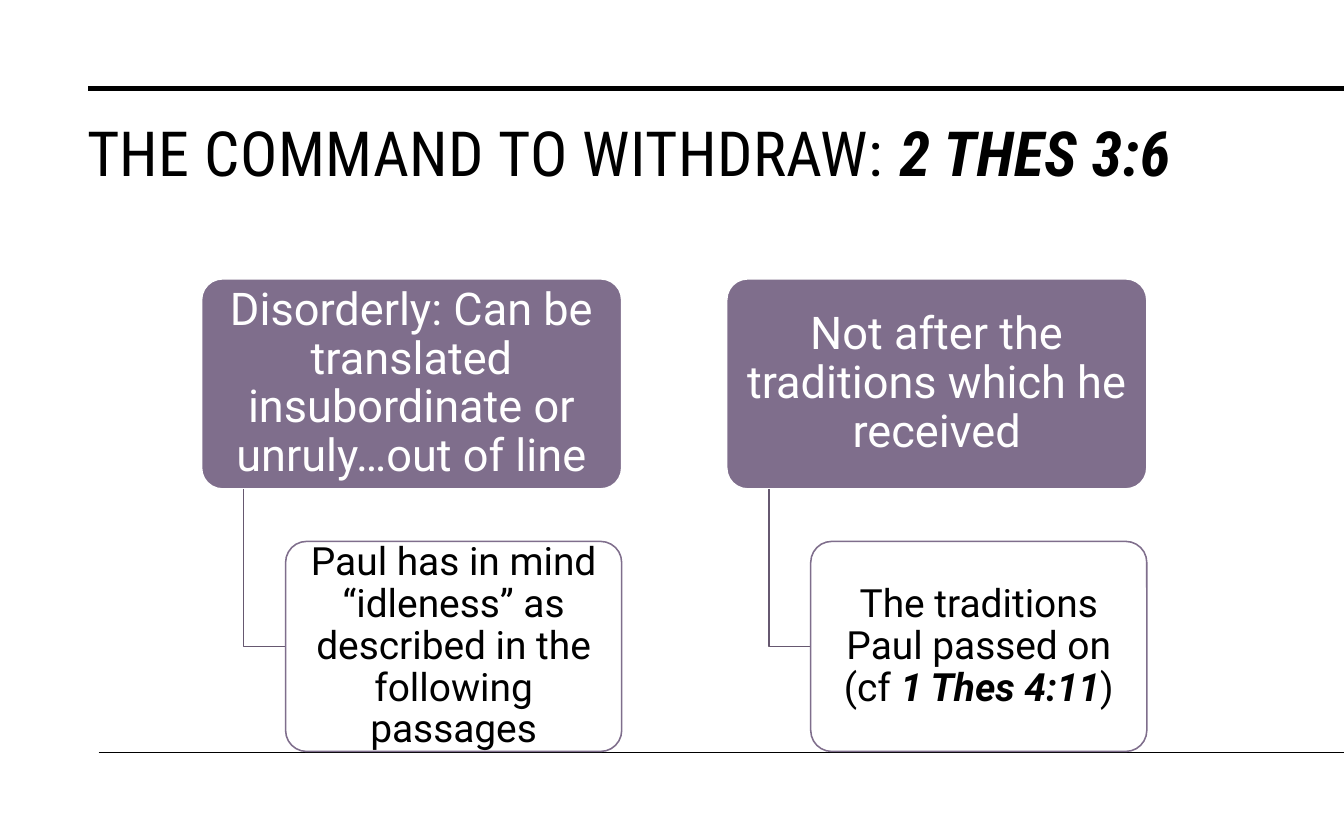
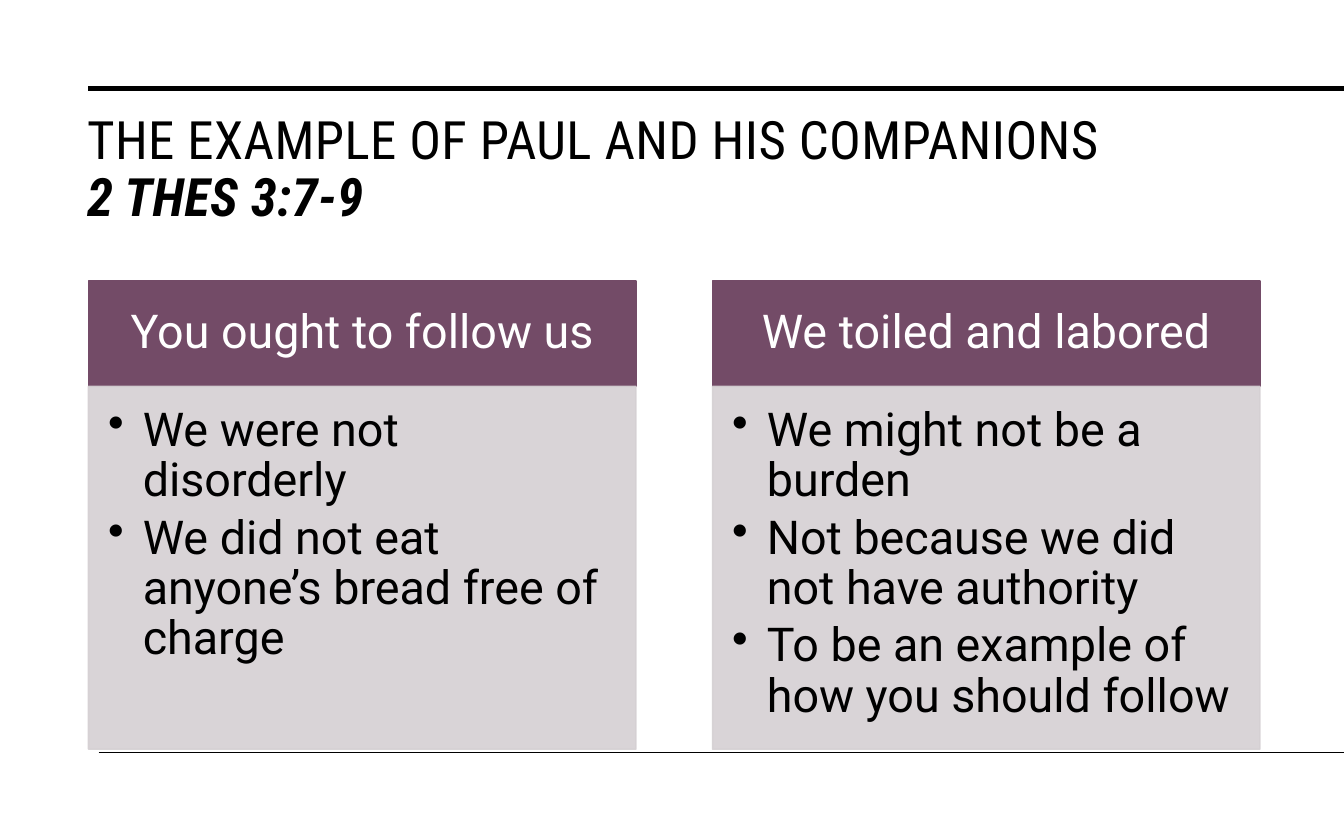
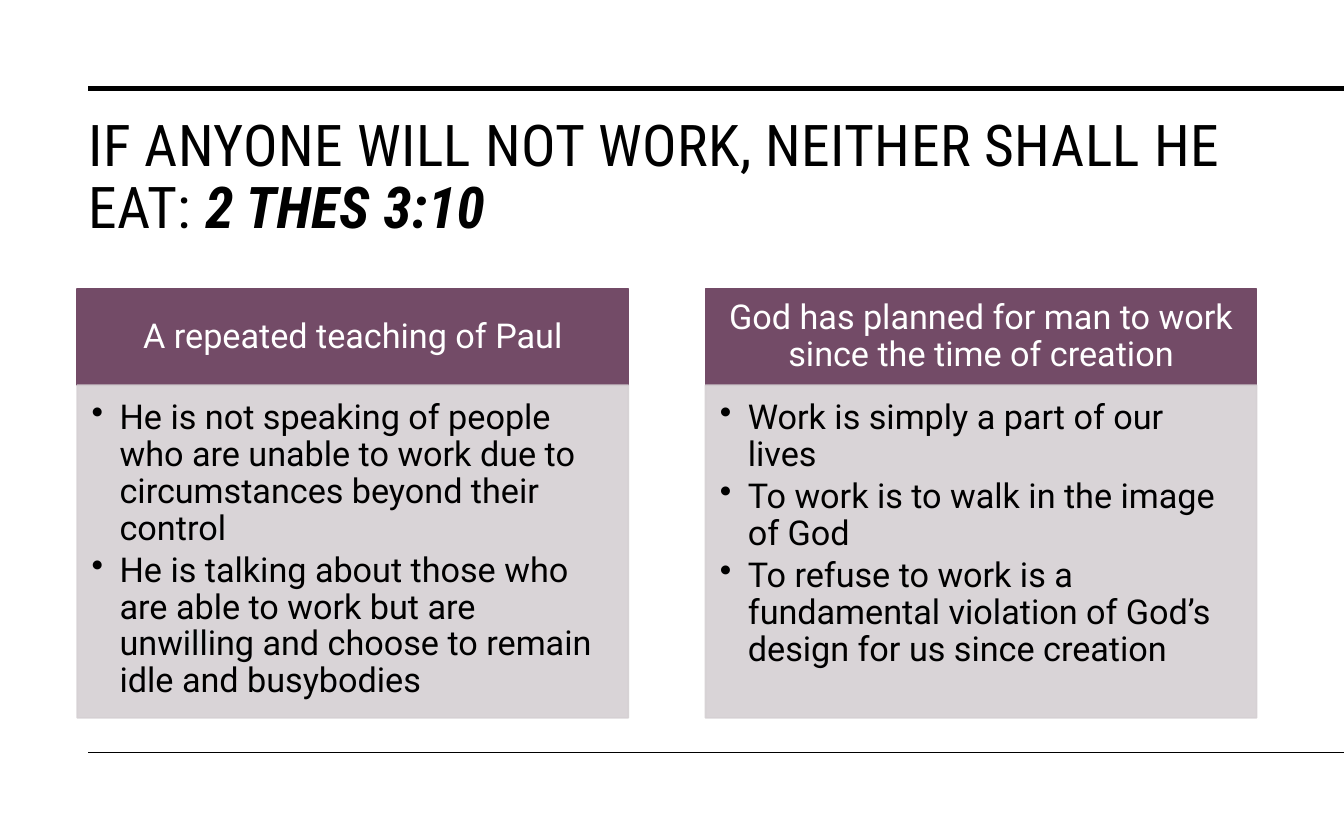
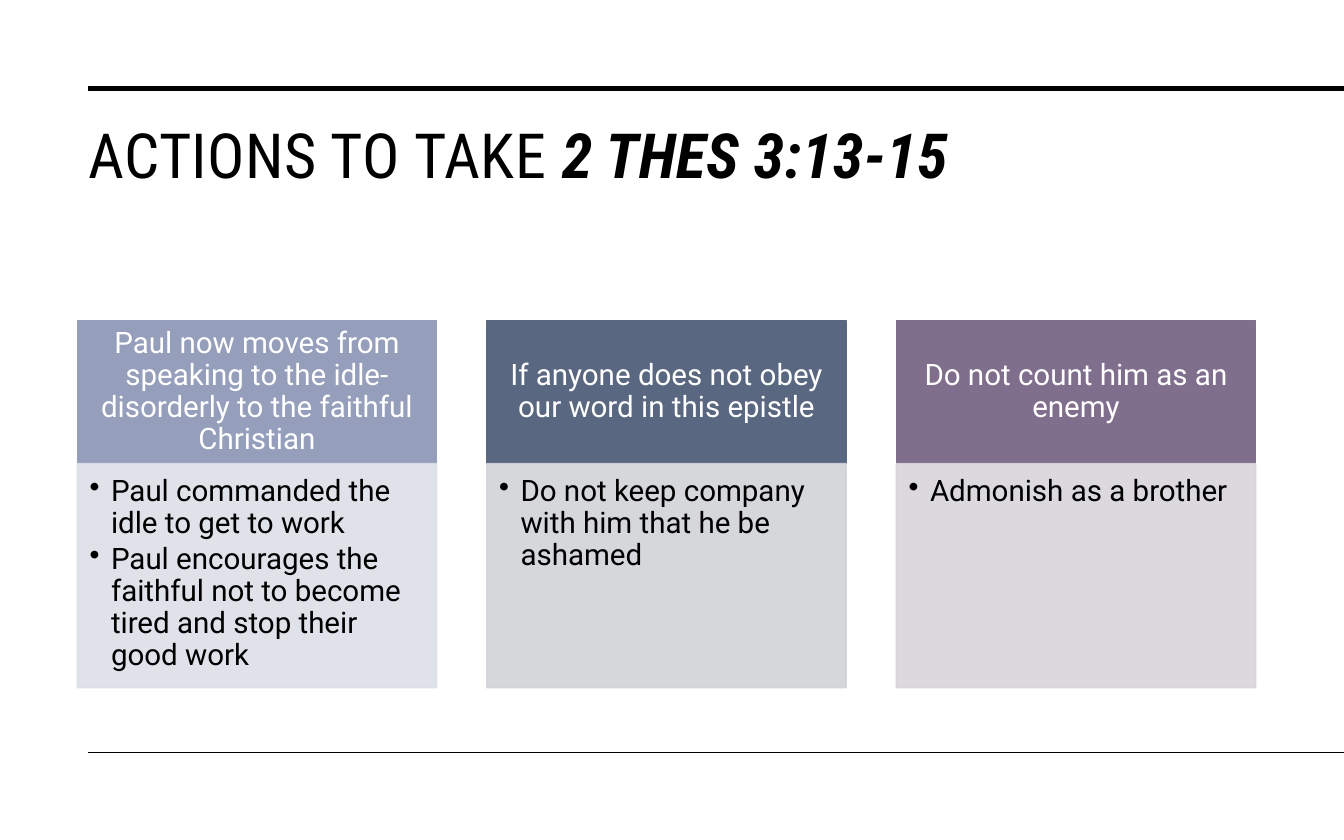
from lxml.etree import SubElement
from pptx import Presentation
from pptx.dml.color import RGBColor as Rgb
from pptx.enum.shapes import MSO_CONNECTOR as Link, MSO_SHAPE as Preset
from pptx.enum.text import MSO_ANCHOR as Anchor, PP_ALIGN as Align
from pptx.oxml.ns import qn
from pptx.util import Inches, Pt

COLORS = {
    "black": "000000", "white": "FFFFFF", "mauve": "7F6E8C", "branch": "665870",
    "plum": "734B67", "plum_tint": "D5D0D3", "periwinkle": "959EBB",
    "periwinkle_tint": "DDDFE7", "slate": "596781", "slate_tint": "D1D3D8",
    "mauve_tint": "D8D5DA",
}
BODY_FONT, TITLE_FONT = "Roboto", "Roboto Condensed"
REFERENCE = {"bold": True, "italic": True}
CARD_INSETS = (0.15, 0.1, 0.15, 0.1)
HEAD_INSETS = (0.56, 0.32, 0.56, 0.32)
POINTS_INSETS = (0.42, 0.42, 0.56, 0.63)


def rgb(color):
    """Return the named colour."""
    return Rgb.from_string(COLORS[color])


def format_run(run, size, color, font=BODY_FONT, **extra):
    """Apply font values to a run."""
    for name, value in {"size": Pt(size), "name": font, **extra}.items():
        setattr(run.font, name, value)
    run.font.color.rgb = rgb(color)


def draw_rule(slide, start, end, y, weight):
    """Draw a horizontal black rule."""
    rule = slide.shapes.add_connector(
        Link.STRAIGHT, Inches(start), Inches(y), Inches(end), Inches(y))
    rule.line.color.rgb = rgb("black")
    rule.line.width = Pt(weight)
    SubElement(rule._element.spPr, qn("a:effectLst"))


def draw_frame(slide, top_end, full_bottom):
    """Draw the rules shared by all slides, with the slide's own overlay."""
    draw_rule(slide, 0.88, 12.46, 0.79, 3.5)
    draw_rule(slide, 0.88, 12.46, 6.72, 1)
    draw_rule(slide, 0.79, top_end, 0.79, 3.5)
    if full_bottom:
        draw_rule(slide, 0.79, 11.21, 6.72, 1)


def write_title(slide, box, lead, reference, size, spacing=None):
    """Write a title that closes with a scripture reference."""
    frame = slide.shapes.add_textbox(*map(Inches, box)).text_frame
    frame.word_wrap = True
    title = frame.paragraphs[0]
    title.line_spacing = spacing
    title.text = lead
    format_run(title.runs[0], size, "black", TITLE_FONT)
    format_run(title.add_run(), size, "black", TITLE_FONT, **REFERENCE)
    title.runs[-1].text = reference
    for run in title.runs:
        run._r.get_or_add_rPr().set("spc", "30")


def draw_panel(slide, preset, box, fill, line, sheer=()):
    """Draw a filled panel, making the listed parts 90% opaque."""
    panel = slide.shapes.add_shape(preset, *map(Inches, box))
    panel.shadow.inherit = False
    panel.fill.solid()
    panel.fill.fore_color.rgb = rgb(fill)
    panel.line.color.rgb = rgb(line)
    panel.line.width = Pt(1)
    for part in sheer:
        tint = panel._element.spPr.find(f"{part}/{qn('a:srgbClr')}")
        SubElement(tint, qn("a:alpha"), val="90000")
    return panel


def fill_text(panel, paragraphs, size, color, insets, indent=None):
    """Write centred paragraphs, or bullets when an indent is given."""
    frame = panel.text_frame
    sides = ("left", "top", "right", "bottom")
    margins = {f"margin_{side}": Pt(size * inset) for side, inset in zip(sides, insets)}
    anchor = Anchor.TOP if indent else Anchor.MIDDLE
    for name, value in {"word_wrap": True, "vertical_anchor": anchor, **margins}.items():
        setattr(frame, name, value)
    for index, runs in enumerate(paragraphs):
        paragraph = frame.add_paragraph() if index else frame.paragraphs[0]
        paragraph.alignment = Align.LEFT if indent else Align.CENTER
        paragraph.line_spacing = 0.9
        for order, text in enumerate(runs):
            run = paragraph.add_run()
            run.text = text
            format_run(run, size, color, **(REFERENCE if order == 1 else {}))
        properties = paragraph._p.get_or_add_pPr()
        after = SubElement(properties, qn("a:spcAft"))
        SubElement(after, qn("a:spcPct"), val="15000" if indent else "35000")
        if indent:
            paragraph.level = 1
            properties.set("marL", str(Inches(indent)))
            properties.set("indent", str(-Inches(indent)))
            SubElement(properties, qn("a:buChar"), char="•")


def draw_branches(slide, box, branches):
    """Draw parent cards side by side, each with a child card hung below."""
    left, top, width, _ = box
    card = width / (1.25 * len(branches) - 0.25)
    height = card / 2
    child_top = top + 1.25 * height
    for index, (parent, child) in enumerate(branches):
        x = left + index * 1.25 * card
        parent_card = draw_panel(
            slide, Preset.ROUNDED_RECTANGLE, (x, top, card, height), "mauve", "white")
        fill_text(parent_card, [[parent]], 29, "white", CARD_INSETS)

        trunk, joint = Inches(x + 0.1 * card), Inches(child_top + height / 2)
        builder = slide.shapes.build_freeform(trunk, Inches(top + height))
        builder.add_line_segments(
            [(trunk, joint), (Inches(x + 0.2 * card), joint)], close=False)
        elbow = builder.convert_to_shape()
        elbow.shadow.inherit = False
        elbow.fill.background()
        elbow.line.color.rgb = rgb("branch")
        elbow.line.width = Pt(1)

        child_card = draw_panel(
            slide, Preset.ROUNDED_RECTANGLE,
            (x + 0.2 * card, child_top, 0.8 * card, height),
            "white", "mauve", [qn("a:solidFill")])
        fill_text(child_card, [child], 25, "black", CARD_INSETS)
        for rounded in (parent_card, child_card):
            rounded.adjustments[0] = 0.1


def draw_columns(slide, box, head_height, size, indent, columns):
    """Draw equal columns of a heading over bullet points."""
    left, top, width, height = box
    column = width / (1.14 * len(columns) - 0.14)
    sheer = [qn("a:solidFill"), f"{qn('a:ln')}/{qn('a:solidFill')}"]
    for index, (color, heading, points) in enumerate(columns):
        x = left + index * 1.14 * column
        head = draw_panel(
            slide, Preset.RECTANGLE, (x, top, column, head_height), color, color)
        fill_text(head, [[heading]], size, "white", HEAD_INSETS)
        tint = f"{color}_tint"
        body = draw_panel(
            slide, Preset.RECTANGLE,
            (x, top + head_height, column, height - head_height), tint, tint, sheer)
        fill_text(body, [[point] for point in points], size, "black",
                  POINTS_INSETS, indent)


def main():
    """Build the four slides."""
    deck = Presentation()
    deck.slide_width, deck.slide_height = Inches(12), Inches(7.5)
    command, example, work, actions = (
        deck.slides.add_slide(deck.slide_layouts[6]) for _ in range(4))
    early_title, late_title = (0.68, 0.97, 10.63, 1.15), (0.69, 0.99, 10.52, 1.26)

    for slide in (command, example):
        draw_frame(slide, 2.4, False)
    for slide in (work, actions):
        draw_frame(slide, 11.21, True)

    write_title(command, early_title, "THE COMMAND TO WITHDRAW: ", "2 THES 3:6", 40)
    draw_branches(command, (1.8, 2.49, 8.44, 4.21), [
        ("Disorderly: Can be translated insubordinate or unruly…out of line",
         ["Paul has in mind “idleness” as described in the following passages"]),
        ("Not after the traditions which he received",
         ["The traditions Paul passed on (cf ", "1 Thes 4:11", ")"]),
    ])

    write_title(example, early_title, "THE EXAMPLE OF PAUL AND HIS COMPANIONS\v",
                "2 THES 3:7-9", 34, 0.9)
    draw_columns(example, (0.79, 2.51, 10.46, 4.18), 0.94, 30, 0.31, [
        ("plum", "You ought to follow us", [
            "We were not disorderly",
            "We did not eat anyone’s bread free of charge"]),
        ("plum", "We toiled and labored", [
            "We might not be a burden",
            "Not because we did not have authority",
            "To be an example of how you should follow"]),
    ])

    write_title(work, late_title, "IF ANYONE WILL NOT WORK, NEITHER SHALL HE EAT: ",
                "2 THES 3:10", 37, 0.9)
    draw_columns(work, (0.69, 2.58, 10.53, 3.83), 0.86, 22, 0.25, [
        ("plum", "A repeated teaching of Paul", [
            "He is not speaking of people who are unable to work due to "
            "circumstances beyond their control",
            "He is talking about those who are able to work but are unwilling "
            "and choose to remain idle and busybodies"]),
        ("plum", "God has planned for man to work since the time of creation", [
            "Work is simply a part of our lives",
            "To work is to walk in the image of God",
            "To refuse to work is a fundamental violation of God’s design "
            "for us since creation"]),
    ])

    write_title(actions, late_title, "ACTIONS TO TAKE ", "2 THES 3:13-15", 40)
    draw_columns(actions, (0.69, 2.86, 10.52, 3.28), 1.28, 19, 0.19, [
        ("periwinkle", "Paul now moves from speaking to the idle-disorderly "
                       "to the faithful Christian", [
            "Paul commanded the idle to get to work",
            "Paul encourages the faithful not to become tired and stop "
            "their good work"]),
        ("slate", "If anyone does not obey our word in this epistle", [
            "Do not keep company with him that he be ashamed"]),
        ("mauve", "Do not count him as an enemy", ["Admonish as a brother"]),
    ])
    deck.save("out.pptx")


if __name__ == "__main__":
    main()
